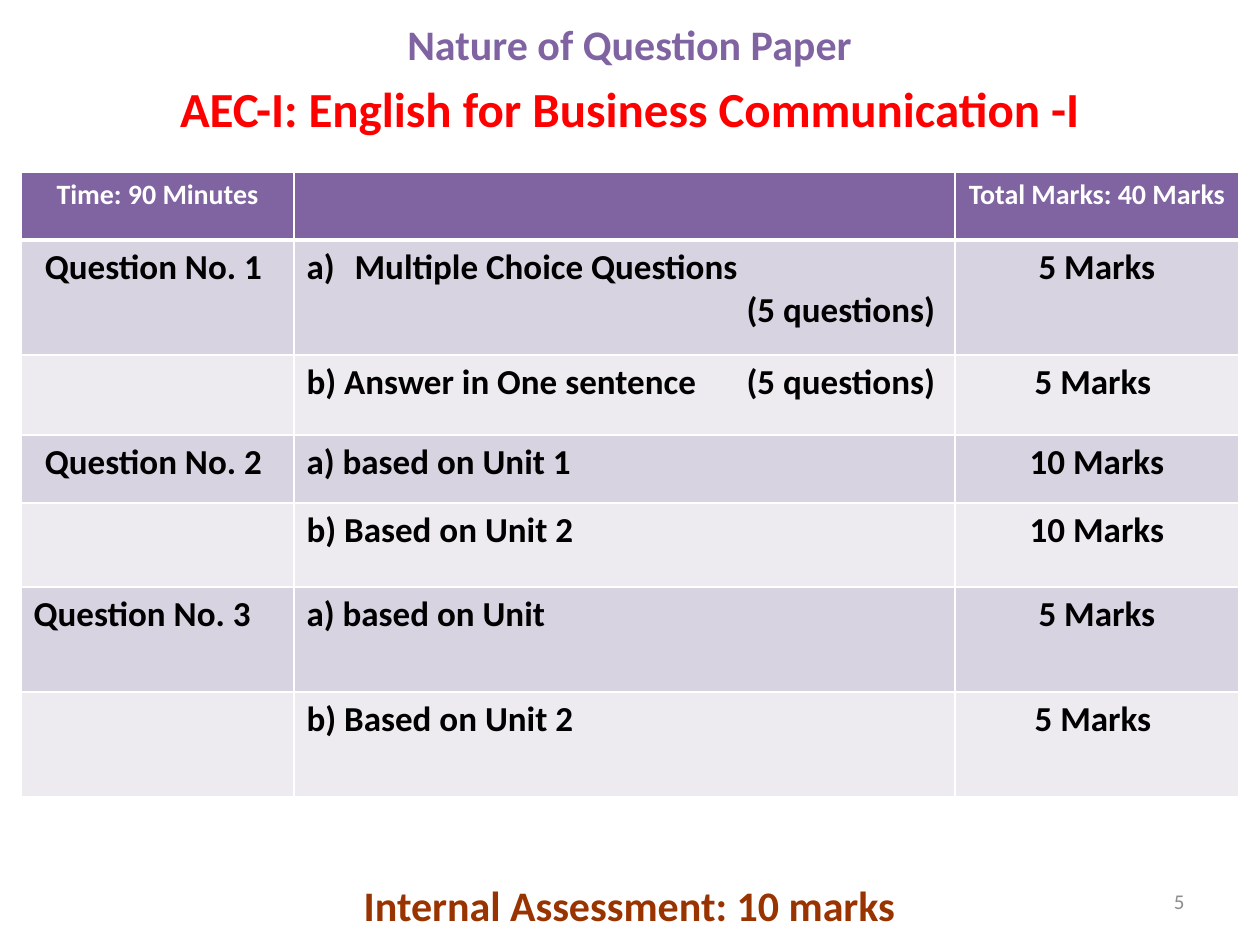
from lxml import etree
from pptx import Presentation, util as u
from pptx.dml.color import RGBColor
from pptx.enum import text
from pptx.oxml.ns import qn

LEFT, CENTER, RIGHT, JUSTIFY = (
    text.PP_ALIGN.LEFT, text.PP_ALIGN.CENTER, text.PP_ALIGN.RIGHT, text.PP_ALIGN.JUSTIFY)
TOP, MIDDLE = text.MSO_ANCHOR.TOP, text.MSO_ANCHOR.MIDDLE
SCALE = 914400 / 126

# position, anchor, paragraphs as (wording, alignment, font format)
TEXT_BOXES = [
    ((10, 12, 1239, 130), TOP, [
        ("Nature of Question Paper", CENTER, dict(size=24, bold=True, color="8064A2")),
        ("AEC-I: English for Business Communication -I", CENTER,
         dict(size=28, bold=True, color="FF0000")),
    ]),
    ((10, 873, 1239, 63), TOP, [
        ("Internal Assessment: 10 marks", CENTER, dict(size=24, bold=True, color="993300")),
    ]),
    ((903, 876, 294, 50), MIDDLE, [("5", RIGHT, dict(size=12, color="8C8C8C"))]),
]

TABLE_LEFT, TABLE_TOP = 21, 172
COLUMN_WIDTHS = [273, 661, 284]
ROW_HEIGHTS = [68, 115, 80, 68, 84, 105, 105]
# each cell is a list of (wording, alignment)
ROWS = [
    [[("Time: 90 Minutes", CENTER)], [], [("Total Marks: 40 Marks", CENTER)]],
    [[("Question No. 1 ", CENTER)],
     [("Multiple Choice Questions ", JUSTIFY), ("\t(5 questions)", LEFT)],
     [("5 Marks", CENTER)]],
    [[], [("b) Answer in One sentence\t(5 questions) ", LEFT)], [("5 Marks ", CENTER)]],
    [[("Question No. 2 ", CENTER)], [("a) based on Unit 1", JUSTIFY)], [("10 Marks", CENTER)]],
    [[], [("b) Based on Unit 2", LEFT)], [("10 Marks", CENTER)]],
    [[("Question No. 3", LEFT)], [("a) based on Unit", LEFT)], [("5 Marks", CENTER)]],
    [[], [("b) Based on Unit 2", LEFT)], [("5 Marks ", CENTER)]],
]
HEADER_FILL, BAND_FILLS = "8064A2", ["D8D3E0", "EDEAF0"]
HEADER_FONT = dict(size=16, bold=True, color="FFFFFF")
BODY_FONT = dict(size=20, bold=True, color="000000")
TAB_STOP, LETTER_INDENT = 440, 48


def px(value):
    return u.Emu(round(value * SCALE))


def rgb(value):
    return RGBColor.from_string(value)


def write(frame, paragraphs):
    """Fill a text frame with (wording, alignment, font format) paragraphs."""
    for index, (wording, alignment, font_format) in enumerate(paragraphs):
        paragraph = frame.add_paragraph() if index else frame.paragraphs[0]
        paragraph.alignment = alignment
        run = paragraph.add_run()
        run.text = wording
        values = dict(font_format, name="Calibri", size=u.Pt(font_format["size"]))
        run.font.color.rgb = rgb(values.pop("color"))
        for name, value in values.items():
            setattr(run.font, name, value)
        if "\t" in wording:
            tabs = etree.SubElement(paragraph._p.get_or_add_pPr(), qn("a:tabLst"))
            etree.SubElement(tabs, qn("a:tab"), pos=str(px(TAB_STOP)), algn="l")


def add_letter(paragraph):
    """Number a paragraph a), b), ... with a hanging indent."""
    properties = paragraph._p.get_or_add_pPr()
    properties.set("marL", str(px(LETTER_INDENT)))
    properties.set("indent", str(-px(LETTER_INDENT)))
    etree.SubElement(properties, qn("a:buFont"), typeface="+mj-lt")
    etree.SubElement(properties, qn("a:buAutoNum"), type="alphaLcParenR")


def set_borders(cell, widths):
    """Draw white borders; widths maps side letters to points."""
    properties = cell._tc.get_or_add_tcPr()
    for side, width in widths.items():
        line = etree.SubElement(properties, qn(f"a:ln{side}"), w=str(u.Pt(width)))
        fill = etree.SubElement(line, qn("a:solidFill"))
        etree.SubElement(fill, qn("a:srgbClr"), val="FFFFFF")


def add_text_boxes(slide):
    for position, anchor, paragraphs in TEXT_BOXES:
        frame = slide.shapes.add_textbox(*map(px, position)).text_frame
        frame.word_wrap = True
        frame.vertical_anchor = anchor
        write(frame, paragraphs)
        for paragraph in frame.paragraphs[1:]:
            paragraph.space_before = u.Pt(5.6)


def add_question_table(slide):
    table = slide.shapes.add_table(
        len(ROWS), len(COLUMN_WIDTHS), px(TABLE_LEFT), px(TABLE_TOP),
        px(sum(COLUMN_WIDTHS)), px(sum(ROW_HEIGHTS))).table
    for column, width in zip(table.columns, COLUMN_WIDTHS):
        column.width = px(width)
    for row_index, (row, height) in enumerate(zip(ROWS, ROW_HEIGHTS)):
        table.rows[row_index].height = px(height)
        header = row_index == 0
        font_format = HEADER_FONT if header else BODY_FONT
        fill = HEADER_FILL if header else BAND_FILLS[(row_index - 1) % 2]
        for column_index, paragraphs in enumerate(row):
            cell = table.cell(row_index, column_index)
            set_borders(cell, dict(L=1, R=1, T=3 if row_index == 1 else 1, B=3 if header else 1))
            cell.fill.solid()
            cell.fill.fore_color.rgb = rgb(fill)
            write(cell.text_frame, [(*paragraph, font_format) for paragraph in paragraphs])
    add_letter(table.cell(1, 1).text_frame.paragraphs[0])


def main():
    presentation = Presentation()
    presentation.slide_width, presentation.slide_height = px(1260), px(945)
    slide = presentation.slides.add_slide(presentation.slide_layouts[6])
    add_text_boxes(slide)
    add_question_table(slide)
    presentation.save("out.pptx")


if __name__ == "__main__":
    main()
